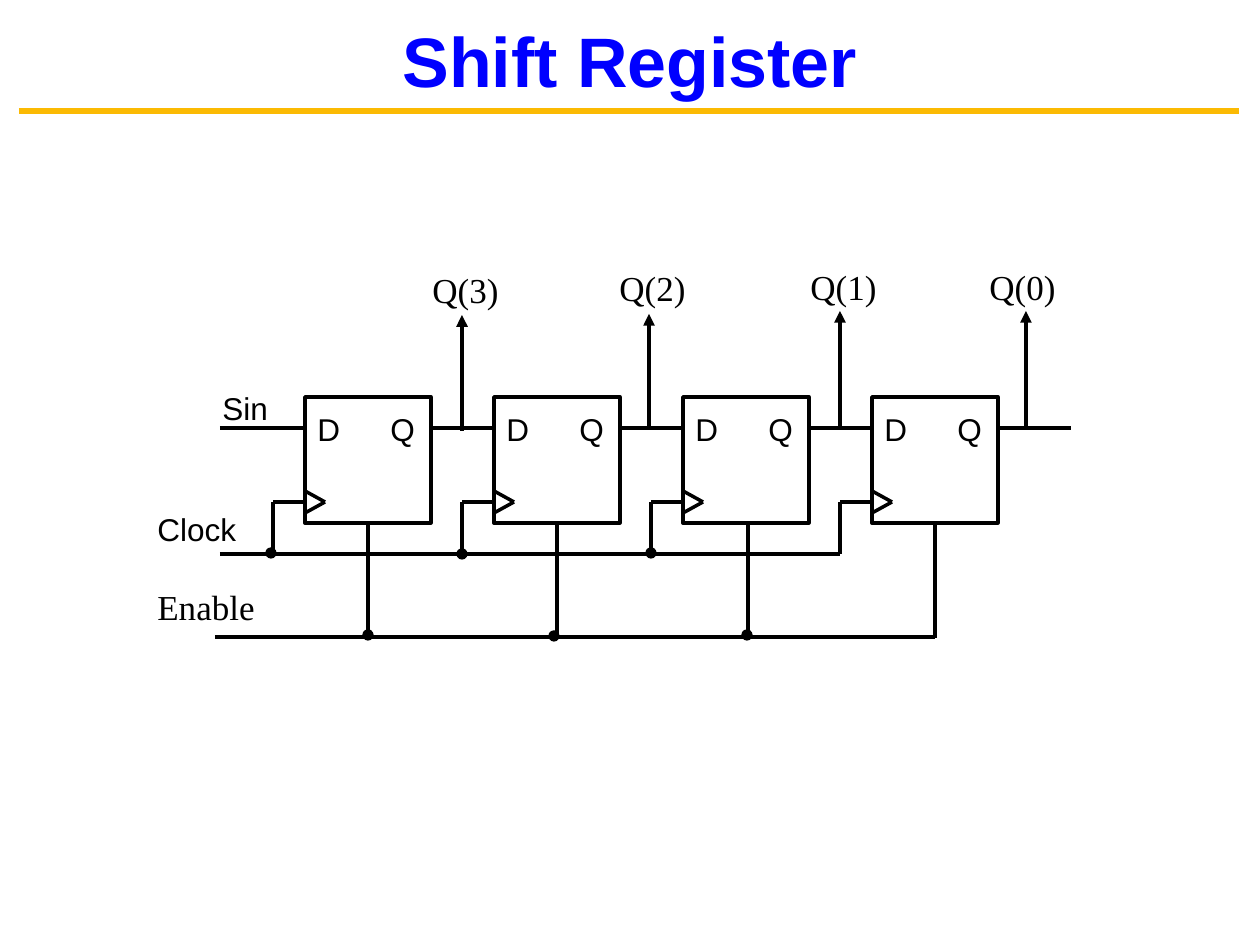
"""Builds a slide showing a four-stage shift register circuit."""
from dataclasses import dataclass

from lxml import etree
from pptx import Presentation
from pptx import util as u
from pptx.dml.color import RGBColor
from pptx.enum import shapes, text
from pptx.oxml.ns import qn


@dataclass(frozen=True)
class Theme:
    """Colours, fonts, type sizes and line widths."""
    ink: RGBColor = RGBColor(0, 0, 0)
    title: RGBColor = RGBColor(0, 0, 255)
    rule: RGBColor = RGBColor(0xFB, 0xBA, 0x03)
    paper: RGBColor = RGBColor(255, 255, 255)
    sans: str = "Arial"
    serif: str = "Times New Roman"
    title_size: float = 40
    pin_size: float = 18
    signal_size: float = 20
    rule_width: float = 3.75
    wire: float = 2
    heavy_wire: float = 2.25
    dot_line: float = 0.75


THEME = Theme()
STAGE_LEFT, STAGE_TOP, STAGE_SIZE, STAGE_STEP = 305, 397, 126, 189
DATA_Y, CLOCK_PIN_Y, CLOCK_Y, ENABLE_Y = 428, 502, 554, 637
CLOCK_STUB, DOT_SIZE = 32, 10
DATA_END = 1071
OUTPUTS = [
    ("Q(3)", 462, 431, 315, (420, 262)),
    ("Q(2)", 649, 428, 314, (607, 260)),
    ("Q(1)", 840, 427, 311, (798, 259)),
    ("Q(0)", 1026, 427, 311, (977, 259)),
]
ENABLE_DROPS = [(368, 525, 635), (557, 525, 635), (748, 525, 635), (935, 523, 638)]
DOTS = [(266, 548), (457, 549), (646, 548), (363, 630), (549, 631), (742, 630)]


def px(length):
    """Turn pixels at 126 to the inch into EMU."""
    return u.Emu(round(length * 914400 / 126))


def add_wire(page, start, end, width=THEME.wire, color=THEME.ink, arrow=False):
    """Add a straight line, with an arrowhead at its end if asked."""
    wire = page.shapes.add_connector(
        shapes.MSO_CONNECTOR.STRAIGHT, *map(px, start + end))
    wire.line.color.rgb = color
    wire.line.width = u.Pt(width)
    if arrow:
        etree.SubElement(wire.line._get_or_add_ln(), qn("a:tailEnd"), type="triangle")
    etree.SubElement(wire._element.spPr, qn("a:effectLst"))


def add_label(page, words, place, size, font=THEME.sans):
    """Add a one-line label whose box grows to fit its text."""
    box = page.shapes.add_textbox(*map(px, place))
    box.text_frame.word_wrap = False
    box.text_frame.auto_size = text.MSO_AUTO_SIZE.SHAPE_TO_FIT_TEXT
    para = box.text_frame.paragraphs[0]
    para.text = words
    para.font.name = font
    para.font.size = u.Pt(size)
    para.font.color.rgb = THEME.ink
    return box


def add_title(page, words):
    """Add the centred title and the rule below it."""
    add_wire(page, (19, 111), (1239, 111), THEME.rule_width, THEME.rule)
    box = add_label(page, words, (24, 17, 1212, 84), THEME.title_size)
    box.text_frame.word_wrap = True
    box.text_frame.auto_size = text.MSO_AUTO_SIZE.NONE
    box.text_frame.vertical_anchor = text.MSO_ANCHOR.MIDDLE
    para = box.text_frame.paragraphs[0]
    para.alignment = text.PP_ALIGN.CENTER
    para.font.bold = True
    para.font.color.rgb = THEME.title


def add_flip_flop(page, left):
    """Add one grouped D flip-flop with its pins and clock notch."""
    group = page.shapes.add_group_shape()
    box = group.shapes.add_shape(
        shapes.MSO_SHAPE.RECTANGLE, *map(px, (left, STAGE_TOP, STAGE_SIZE, STAGE_SIZE)))
    box.shadow.inherit = False
    box.fill.background()
    box.line.color.rgb = THEME.ink
    box.line.width = u.Pt(THEME.wire)
    add_label(group, "D", (left, 404, 48, 50), THEME.pin_size)
    add_label(group, "Q", (left + 73, 404, 50, 50), THEME.pin_size)
    tip = (left + 20, CLOCK_PIN_Y)
    add_wire(group, (left, CLOCK_PIN_Y - 11), tip)
    add_wire(group, tip, (left, CLOCK_PIN_Y + 11))


def add_dot(page, left, top):
    """Add a solid junction dot."""
    dot = page.shapes.add_shape(
        shapes.MSO_SHAPE.OVAL, *map(px, (left, top, DOT_SIZE, DOT_SIZE)))
    dot.shadow.inherit = False
    dot.fill.solid()
    dot.fill.fore_color.rgb = THEME.ink
    dot.line.color.rgb = THEME.ink
    dot.line.width = u.Pt(THEME.dot_line)


def add_stages(page):
    """Add the chain of flip-flops with data and clock wires."""
    lefts = [STAGE_LEFT + STAGE_STEP * stage for stage in range(len(OUTPUTS))]
    add_wire(page, (220, DATA_Y), (STAGE_LEFT, DATA_Y))
    for left, data_end in zip(lefts, lefts[1:] + [DATA_END]):
        corner = (left - CLOCK_STUB, CLOCK_PIN_Y)
        add_flip_flop(page, left)
        add_wire(page, (left + STAGE_SIZE, DATA_Y), (data_end, DATA_Y))
        add_wire(page, (left, CLOCK_PIN_Y), corner)
        add_wire(page, corner, (corner[0], CLOCK_Y))
    add_wire(page, (220, CLOCK_Y), (lefts[-1] - CLOCK_STUB, CLOCK_Y))


def add_outputs(page):
    """Add the labelled output arrows."""
    for name, x, bottom, top, corner in OUTPUTS:
        add_wire(page, (x, bottom), (x, top), THEME.heavy_wire, arrow=True)
        add_label(page, name, corner + (92, 54), THEME.signal_size, THEME.serif)


def add_enable(page):
    """Add the enable bus and its drops."""
    add_wire(page, (215, ENABLE_Y), (ENABLE_DROPS[-1][0], ENABLE_Y))
    for x, top, bottom in ENABLE_DROPS:
        add_wire(page, (x, top), (x, bottom), THEME.heavy_wire)


def main():
    """Build and save the slide."""
    deck = Presentation()
    deck.slide_width, deck.slide_height = px(1260), px(945)
    page = deck.slides.add_slide(deck.slide_layouts[6])
    page.background.fill.solid()
    page.background.fill.fore_color.rgb = THEME.paper
    add_title(page, "Shift Register")
    add_stages(page)
    add_label(page, "Sin", (210, 383, 71, 50), THEME.pin_size)
    add_label(page, "Clock", (145, 504, 105, 50), THEME.pin_size)
    add_outputs(page)
    add_label(page, "Enable", (145, 579, 124, 54), THEME.signal_size, THEME.serif)
    add_enable(page)
    for left, top in DOTS:
        add_dot(page, left, top)
    deck.save("out.pptx")


if __name__ == "__main__":
    main()
